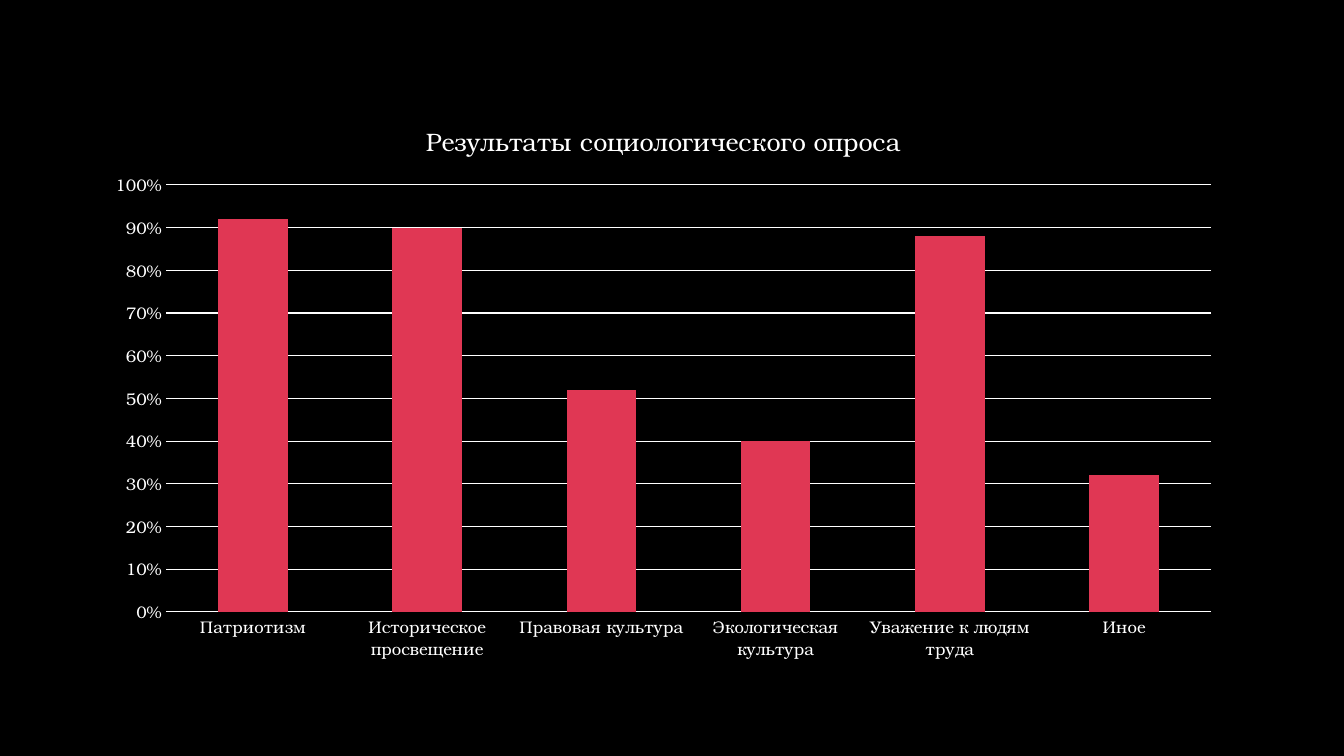
from dataclasses import dataclass

from lxml import etree
from pptx import Presentation
from pptx.chart.axis import CategoryAxis, ValueAxis
from pptx.chart.chart import Chart
from pptx.chart.data import CategoryChartData
from pptx.dml.color import RGBColor
from pptx.enum.chart import XL_CHART_TYPE, XL_TICK_MARK
from pptx.oxml.ns import qn
from pptx.text.text import Font
from pptx.util import Inches, Pt

COLUMN_STACKED = XL_CHART_TYPE.COLUMN_STACKED
NO_TICK = XL_TICK_MARK.NONE

BLACK = RGBColor(0x00, 0x00, 0x00)
WHITE = RGBColor(0xFF, 0xFF, 0xFF)
RED = RGBColor(0xE0, 0x37, 0x54)
FONT_NAME = "TeX Gyre Bonum"
LINE_WIDTH = Pt(0.75)
CHART_TITLE = "Результаты социологического опроса"
BLANK_LAYOUT = 6


@dataclass(frozen=True)
class Answer:
    topic: str
    share: float


ANSWERS = [
    Answer("Патриотизм", 0.92),
    Answer("Историческое просвещение", 0.9),
    Answer("Правовая культура", 0.52),
    Answer("Экологическая культура", 0.4),
    Answer("Уважение к людям труда", 0.88),
    Answer("Иное", 0.32),
]

# Inner plot area as fractions of the chart frame
PLOT_LAYOUT = {"x": 0.064, "y": 0.149, "w": 0.916, "h": 0.747}


def format_font(font: Font, size: float) -> None:
    font.name = FONT_NAME
    font.size = Pt(size)
    font.bold = False
    font.color.rgb = WHITE


def format_axis(axis: CategoryAxis | ValueAxis) -> None:
    axis.major_tick_mark = NO_TICK
    axis.minor_tick_mark = NO_TICK
    format_font(axis.tick_labels.font, 12)


def fix_plot_area(chart: Chart) -> None:
    """Pin the inner plot area to PLOT_LAYOUT."""
    plot_area = chart._chartSpace.chart.plotArea
    for old_layout in plot_area.findall(qn("c:layout")):
        plot_area.remove(old_layout)
    layout = etree.Element(qn("c:layout"))
    manual = etree.SubElement(layout, qn("c:manualLayout"))
    settings = {"layoutTarget": "inner", "xMode": "edge", "yMode": "edge", **PLOT_LAYOUT}
    for name, value in settings.items():
        etree.SubElement(manual, qn(f"c:{name}"), val=str(value))
    plot_area.insert(0, layout)


def format_chart(chart: Chart) -> None:
    format_font(chart.font, 10)
    chart.has_legend = False
    chart.has_title = True
    run = chart.chart_title.text_frame.paragraphs[0].add_run()
    run.text = CHART_TITLE
    format_font(run.font, 18)
    chart.chart_title.include_in_layout = False

    category_axis = chart.category_axis
    format_axis(category_axis)
    category_axis.format.line.color.rgb = WHITE
    category_axis.format.line.width = LINE_WIDTH

    value_axis = chart.value_axis
    format_axis(value_axis)
    value_axis.minimum_scale = 0
    value_axis.maximum_scale = 1
    value_axis.major_unit = 0.1
    value_axis.tick_labels.number_format = "0%"
    value_axis.tick_labels.number_format_is_linked = False
    value_axis.format.line.fill.background()
    value_axis.major_gridlines.format.line.color.rgb = WHITE
    value_axis.major_gridlines.format.line.width = LINE_WIDTH

    plot = chart.plots[0]
    plot.gap_width = 150
    plot.overlap = 100
    plot.vary_by_categories = False
    plot.series[0].format.fill.solid()
    plot.series[0].format.fill.fore_color.rgb = RED
    fix_plot_area(chart)


def main() -> None:
    presentation = Presentation()
    presentation.slide_width = Inches(13.33)
    presentation.slide_height = Inches(7.5)
    slide = presentation.slides.add_slide(presentation.slide_layouts[BLANK_LAYOUT])
    slide.background.fill.solid()
    slide.background.fill.fore_color.rgb = BLACK

    survey = CategoryChartData(number_format="0%")
    survey.categories = [answer.topic for answer in ANSWERS]
    survey.add_series("Series 1", [answer.share for answer in ANSWERS])
    chart_frame = slide.shapes.add_chart(
        COLUMN_STACKED, Inches(0.92), Inches(0.99), Inches(11.32), Inches(5.67), survey
    )
    format_chart(chart_frame.chart)
    presentation.save("out.pptx")


if __name__ == "__main__":
    main()
